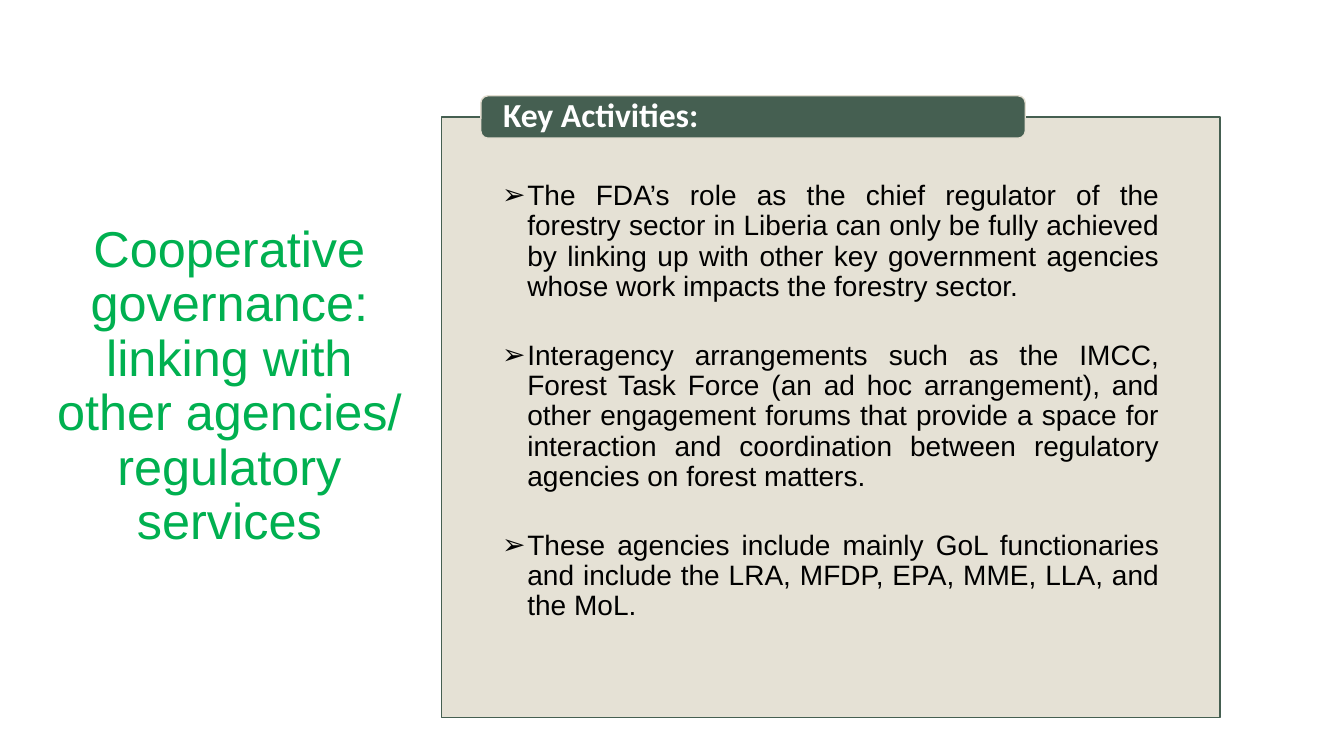
from lxml.etree import SubElement
from pptx import Presentation
from pptx.dml.color import RGBColor
from pptx.enum.shapes import MSO_SHAPE as Preset
from pptx.enum.text import MSO_ANCHOR as Anchor, PP_ALIGN as Align
from pptx.oxml.ns import qn
from pptx.util import Inches, Pt

GREEN = RGBColor(0x00, 0xB0, 0x50)
FOREST = RGBColor(0x45, 0x5F, 0x51)
SAND = RGBColor(0xE3, 0xDE, 0xD1)
BLACK = RGBColor(0x00, 0x00, 0x00)
WHITE = RGBColor(0xFF, 0xFF, 0xFF)

TITLE = "Cooperative governance:\nlinking with other agencies/ regulatory services"
ACTIVITIES = [
    "The FDA’s role as the chief regulator of the forestry sector in Liberia can only be "
    "fully achieved by linking up with other key government agencies whose work impacts "
    "the forestry sector.",
    "Interagency arrangements such as the IMCC, Forest Task Force (an ad hoc arrangement), "
    "and other engagement forums that provide a space for interaction and coordination "
    "between regulatory agencies on forest matters.",
    "These agencies include mainly GoL functionaries and include the LRA, MFDP, EPA, MME, "
    "LLA, and the MoL.",
]


class SlideBuilder:
    """Draws styled elements on one slide, placed in percent of its size."""

    def __init__(self, presentation):
        self.width = presentation.slide_width
        self.height = presentation.slide_height
        self.slide = presentation.slides.add_slide(presentation.slide_layouts[6])

    def place(self, left, top, width, height):
        return [int(share * size / 100) for share, size in
                zip((left, top, width, height), (self.width, self.height) * 2)]

    def text_box(self, area):
        return self.slide.shapes.add_textbox(*self.place(*area))

    def panel(self, preset, area, fill, line, opacity=100):
        shape = self.slide.shapes.add_shape(preset, *self.place(*area))
        shape.shadow.inherit = False
        shape.fill.solid()
        shape.fill.fore_color.rgb = fill
        shape.line.color.rgb = line
        shape.line.width = Pt(1)
        if opacity < 100:
            color = shape._element.spPr.find(qn("a:solidFill"))[0]
            SubElement(color, qn("a:alpha"), val=str(opacity * 1000))
        return shape

    def add_text(self, shape, texts, font, size, color, align, anchor=Anchor.MIDDLE,
                 side=0.1, top=0.05, bold=False, bullet=None, gap=0):
        frame = shape.text_frame
        frame.word_wrap = True
        frame.vertical_anchor = anchor
        frame.margin_left = frame.margin_right = Inches(side)
        frame.margin_top = frame.margin_bottom = Inches(top)
        for index, text in enumerate(texts):
            paragraph = frame.add_paragraph() if index else frame.paragraphs[0]
            paragraph.text = text
            paragraph.alignment = align
            paragraph.line_spacing = 0.9
            if index:
                paragraph.space_before = Pt(gap)
            if bullet:
                self.add_bullet(paragraph, bullet)
            paragraph.font.name = font
            paragraph.font.size = Pt(size)
            paragraph.font.bold = bold
            paragraph.font.color.rgb = color

    def add_bullet(self, paragraph, character):
        properties = paragraph._p.get_or_add_pPr()
        properties.set("marL", str(Inches(0.25)))
        properties.set("indent", str(-Inches(0.25)))
        SubElement(properties, qn("a:buFont"), typeface="Arial")
        SubElement(properties, qn("a:buChar"), char=character)


def main():
    presentation = Presentation()
    presentation.slide_width = Inches(13.33)
    presentation.slide_height = Inches(7.5)
    builder = SlideBuilder(presentation)

    title = builder.text_box((2.4, 12.27, 29.33, 77.87))
    builder.add_text(title, [TITLE], "Arial", 36, GREEN, Align.CENTER)

    activities = builder.panel(Preset.RECTANGLE, (32.86, 15.47, 57.91, 79.47),
                               SAND, FOREST, opacity=90)
    builder.add_text(activities, ACTIVITIES, "Arial", 20, BLACK, Align.JUSTIFY, Anchor.TOP,
                     side=0.6, top=0.64, bullet="➢", gap=27.6)

    heading = builder.panel(Preset.ROUNDED_RECTANGLE, (35.78, 12.67, 40.51, 5.6),
                            FOREST, SAND)
    builder.add_text(heading, ["Key Activities:"], "Calibri", 24, WHITE, Align.LEFT,
                     side=0.2, top=0, bold=True)

    presentation.save("out.pptx")


if __name__ == "__main__":
    main()
